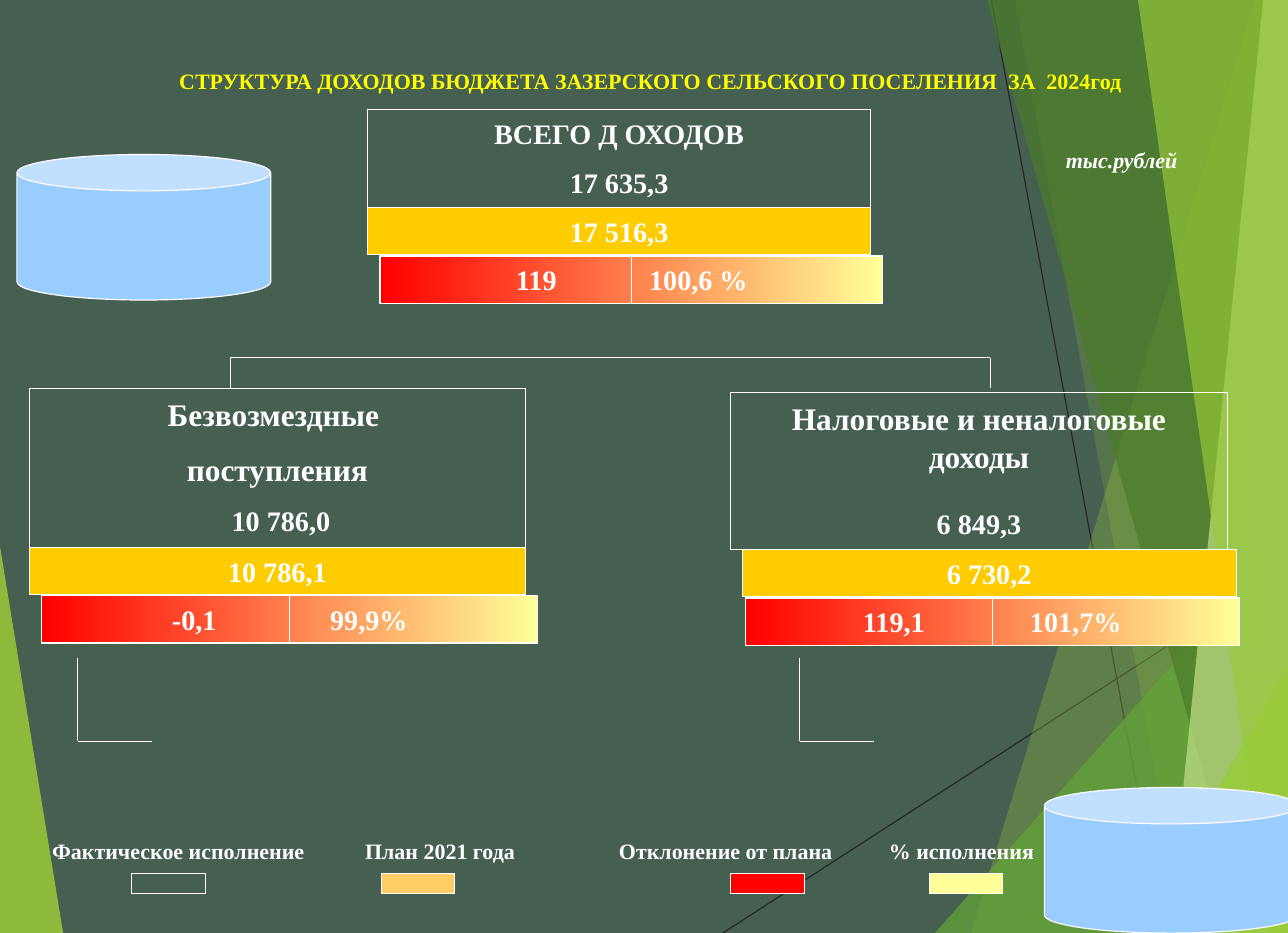
from dataclasses import dataclass

import pptx
import pptx.dml.color
import pptx.enum.shapes
import pptx.enum.text
import pptx.oxml.ns
import pptx.util
from lxml import etree

Pt = pptx.util.Pt
RGBColor = pptx.dml.color.RGBColor
Shape = pptx.enum.shapes.MSO_SHAPE
Align = pptx.enum.text.PP_ALIGN
qn = pptx.oxml.ns.qn

WIDTH, HEIGHT = 822.24, 595.44
FONT = "Times New Roman"
SLATE = RGBColor(0x45, 0x5F, 0x51)
WHITE = RGBColor(0xFF, 0xFF, 0xFF)
YELLOW = RGBColor(0xFF, 0xFF, 0x00)
GOLD = RGBColor(0xFF, 0xCC, 0x00)
ORANGE = RGBColor(0xFF, 0xCC, 0x66)
RED = RGBColor(0xFF, 0x00, 0x00)
CREAM = RGBColor(0xFF, 0xFF, 0x99)
SKY = RGBColor(0x99, 0xCC, 0xFF)
INK = RGBColor(0x26, 0x26, 0x26)
LIME = RGBColor(0x99, 0xCB, 0x38)
GREEN = RGBColor(0x63, 0xA5, 0x37)
FOREST = RGBColor(0x4A, 0x7C, 0x29)
PALE = RGBColor(0xC2, 0xE0, 0x88)


@dataclass
class Facet:
    points: list[tuple[float, float]]
    color: RGBColor
    opacity: int


@dataclass
class Line:
    text: str
    size: float = 18
    before: float = 10


@dataclass
class Bar:
    left: float
    top: float
    width: float


@dataclass
class Income:
    """One income block: actual result, plan, then deviation and percentage."""
    actual: Bar
    height: float
    lines: list[Line]
    plan: Bar
    plan_value: str
    result: Bar
    result_values: str
    result_indent: float
    result_tab: float


FACETS = [
    Facet([(0, 348.5), (40.3, HEIGHT), (0, HEIGHT)], LIME, 85),
    Facet([(801.4, 0), (619.9, HEIGHT), (WIDTH, HEIGHT), (WIDTH, 0)], LIME, 30),
    Facet([(648, 0), (756, HEIGHT), (WIDTH, HEIGHT), (WIDTH, 0)], LIME, 20),
    Facet([(596.9, HEIGHT), (WIDTH, 340.6), (WIDTH, HEIGHT)], GREEN, 72),
    Facet([(630, 0), (797, HEIGHT), (WIDTH, HEIGHT), (WIDTH, 0)], FOREST, 70),
    Facet([(806.4, 0), (745.9, HEIGHT), (WIDTH, HEIGHT), (WIDTH, 0)], PALE, 70),
    Facet([(726.5, 0), (810.7, HEIGHT), (WIDTH, HEIGHT), (WIDTH, 0)], LIME, 65),
    Facet([(725, HEIGHT), (WIDTH, 425), (WIDTH, HEIGHT)], LIME, 80),
]
INCOMES = [
    Income(Bar(234.7, 69.8, 321.1), 62.6,
           [Line("ВСЕГО Д ОХОДОВ"), Line("17 635,3")],
           Bar(234.7, 132.5, 321.1), "17 516,3",
           Bar(242.6, 163.4, 321.1), "119\t100,6 %", 86.8, 85),
    Income(Bar(18.7, 247.7, 316.8), 101.5,
           [Line("Безвозмездные ", 20), Line("поступления", 20, 11), Line(" 10 786,0")],
           Bar(18.7, 349.2, 316.8), "10 786,1",
           Bar(26.6, 380.2, 316.8), "-0,1\t99,9%", 83.2, 101),
    Income(Bar(466.6, 250.6, 316.8), 100.1,
           [Line("Налоговые и неналоговые доходы", 20), Line("6 849,3", 18, 20)],
           Bar(473.8, 350.6, 315.4), "6 730,2",
           Bar(475.9, 381.6, 315.4), "119,1\t101,7%", 75, 106.6),
]
CONNECTORS = [
    (146.9, 228.2, 632.2, 228.2), (146.9, 228.2, 146.9, 247.7), (632.2, 228.2, 632.2, 247.7),
]
for bracket_left in (49.7, 510.5):
    CONNECTORS += [(bracket_left, 419.8, bracket_left, 473),
                   (bracket_left, 473, bracket_left + 47.5, 473)]
LEGEND = "Фактическое исполнение\tПлан 2021 года\tОтклонение от плана\t% исполнения"
LEGEND_TABS = [199.8, 361.9, 534.2]
SWATCHES = [(84.2, None), (243.4, ORANGE), (466.6, RED), (593.3, CREAM)]


def write(box, lines: list[Line], align=Align.CENTER, color: RGBColor = WHITE,
          italic: bool = False, indent: float = 7.9) -> None:
    frame = box.text_frame
    frame.word_wrap = True
    frame.auto_size = pptx.enum.text.MSO_AUTO_SIZE.NONE
    frame.vertical_anchor = pptx.enum.text.MSO_ANCHOR.TOP
    frame.margin_left, frame.margin_right = Pt(indent), Pt(7.9)
    frame.margin_top = frame.margin_bottom = Pt(4.3)
    frame.text = "\n".join(line.text for line in lines)
    for index, (para, line) in enumerate(zip(frame.paragraphs, lines)):
        para.alignment = align
        para.line_spacing = 1.0
        para.space_before = Pt(line.before if index else 0)
        for span in para.runs:
            span.font.name, span.font.size = FONT, Pt(line.size)
            span.font.bold, span.font.italic = True, italic
            span.font.color.rgb = color


def set_tabs(box, stops: list[float]) -> None:
    properties = box.text_frame.paragraphs[0]._p.get_or_add_pPr()
    tabs = etree.SubElement(properties, qn("a:tabLst"))
    for stop in stops:
        etree.SubElement(tabs, qn("a:tab"), pos=str(int(Pt(stop))), algn="l")


def add_box(page, left: float, top: float, width: float, height: float,
            fill: RGBColor | None = None, kind=Shape.RECTANGLE):
    box = page.shapes.add_shape(kind, Pt(left), Pt(top), Pt(width), Pt(height))
    box.shadow.inherit = False
    box.line.color.rgb, box.line.width = WHITE, Pt(0.75)
    if fill is None:
        box.fill.background()
    else:
        box.fill.solid()
        box.fill.fore_color.rgb = fill
    return box


def add_line(page, ends: tuple[float, float, float, float], color: RGBColor = WHITE) -> None:
    line = page.shapes.add_connector(
        pptx.enum.shapes.MSO_CONNECTOR.STRAIGHT, *(Pt(end) for end in ends))
    line.line.color.rgb, line.line.width = color, Pt(0.75)
    etree.SubElement(line._element.spPr, qn("a:effectLst"))


def add_facet(page, facet: Facet) -> None:
    corners = [(Pt(x), Pt(y)) for x, y in facet.points]
    builder = page.shapes.build_freeform(*corners[0])
    builder.add_line_segments(corners[1:], close=True)
    shape = builder.convert_to_shape()
    shape.shadow.inherit = False
    shape.line.fill.background()
    shape.fill.solid()
    shape.fill.fore_color.rgb = facet.color
    tint = shape._element.spPr.find(".//" + qn("a:srgbClr"))
    etree.SubElement(tint, qn("a:alpha"), val=str(facet.opacity * 1000))


def add_income(page, income: Income) -> None:
    actual, plan, result = income.actual, income.plan, income.result
    write(add_box(page, actual.left, actual.top, actual.width, income.height), income.lines)
    write(add_box(page, plan.left, plan.top, plan.width, 30.2, GOLD), [Line(income.plan_value)])
    box = add_box(page, result.left, result.top, result.width, 30.2)
    box.fill.gradient()
    box.fill.gradient_angle = 0
    for stop, color, position in zip(box.fill.gradient_stops, (RED, CREAM), (0, 1)):
        stop.color.rgb, stop.position = color, position
    write(box, [Line(income.result_values)], Align.LEFT, indent=income.result_indent)
    set_tabs(box, [income.result_tab])
    middle = result.left + result.width / 2
    add_line(page, (middle, result.top, middle, result.top + 30.2))


def main() -> None:
    deck = pptx.Presentation()
    deck.slide_width, deck.slide_height = Pt(WIDTH), Pt(HEIGHT)
    page = deck.slides.add_slide(deck.slide_layouts[5])
    page.background.fill.solid()
    page.background.fill.fore_color.rgb = SLATE

    add_line(page, (461.5, HEIGHT, WIDTH, 362.6), INK)
    add_line(page, (632.9, 0, 743, HEIGHT), INK)
    for facet in FACETS:
        add_facet(page, facet)

    title = page.shapes.title
    title.element.getparent().append(title.element)
    title.left, title.top, title.width, title.height = Pt(44.6), Pt(38.9), Pt(741.6), Pt(25.2)
    heading = "СТРУКТУРА ДОХОДОВ БЮДЖЕТА ЗАЗЕРСКОГО СЕЛЬСКОГО ПОСЕЛЕНИЯ  ЗА  2024год"
    write(title, [Line(heading, 14)], color=YELLOW)

    units = page.shapes.add_textbox(Pt(672.5), Pt(89.3), Pt(105.8), Pt(25.2))
    write(units, [Line("тыс.рублей", 14)], Align.LEFT, italic=True)
    for ends in CONNECTORS:
        add_line(page, ends)
    for income in INCOMES:
        add_income(page, income)

    legend = page.shapes.add_textbox(Pt(11.5), Pt(529.9), Pt(771.8), Pt(25.2))
    write(legend, [Line(LEGEND, 14)], Align.LEFT, indent=21.7)
    set_tabs(legend, LEGEND_TABS)
    for left, fill in SWATCHES:
        add_box(page, left, 557.3, 46.8, 13, fill)
    for left, top in ((10.8, 98.6), (666.7, 502.6)):
        add_box(page, left, top, 162, 92.9, SKY, Shape.CAN)
    deck.save("out.pptx")


if __name__ == "__main__":
    main()
